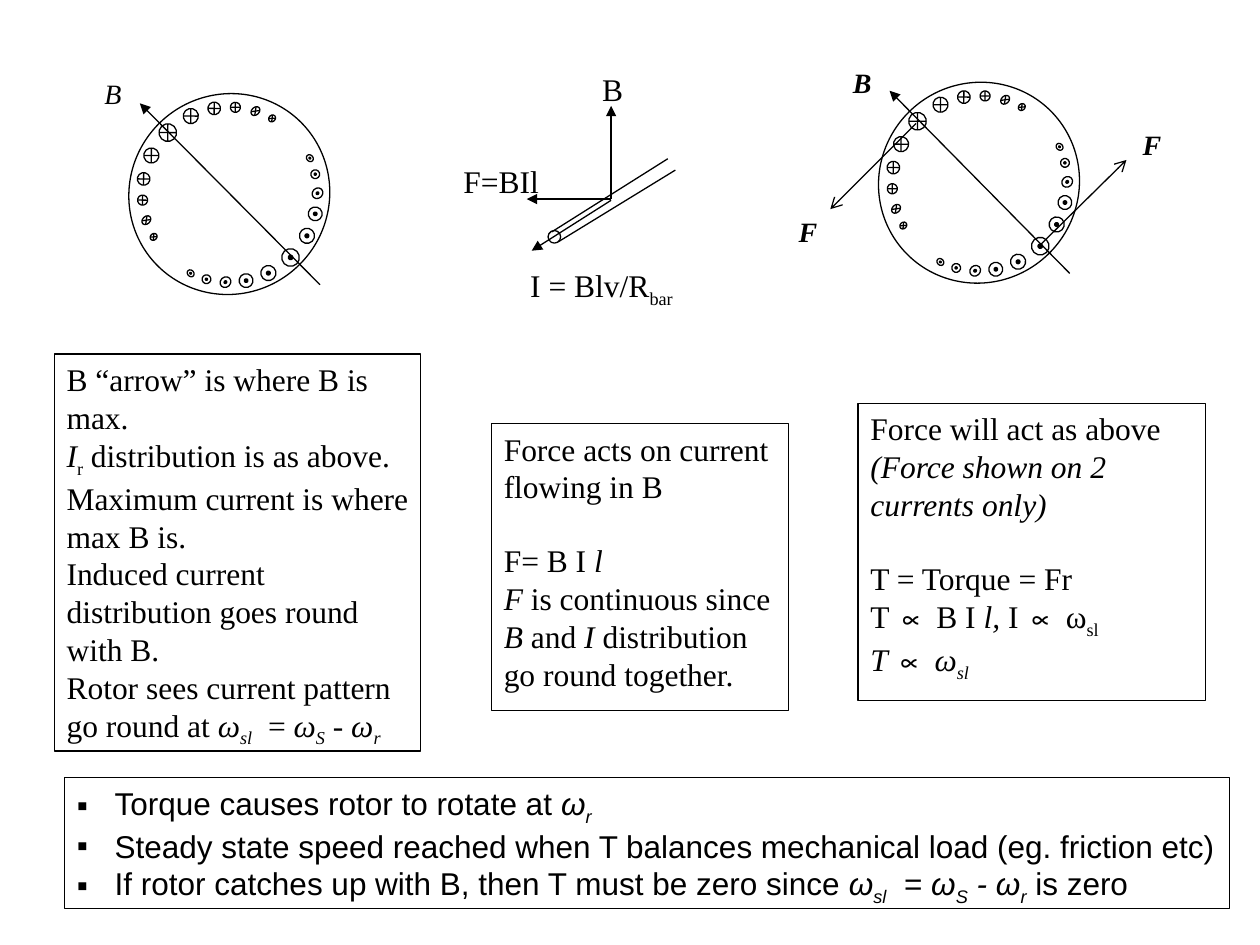
from math import cos, radians, sin

from pptx import Presentation
from pptx.dml.color import RGBColor
from pptx.enum.shapes import MSO_CONNECTOR, MSO_SHAPE
from pptx.enum.text import MSO_ANCHOR, MSO_AUTO_SIZE, PP_ALIGN
from pptx.oxml import parse_xml
from pptx.oxml.ns import nsdecls, qn
from pptx.util import Inches, Pt

COLORS = {"ink": "000000", "paper": "FFFFFF"}
SERIF, SANS = "Times New Roman", "Arial"
LINE_WIDTH = 0.75

# Text runs are (text, style): i = italic, b = bold, s = subscript.
# A paragraph starting with GAP has one empty line above it.
GAP = "gap"
SLIP = [("ω", "i"), ("sl", "is"), ("  = ", ""), ("ω", "i"), ("S", "is"), (" - ω", "i"), ("r", "is")]
NOTES = [
    ((0.43, 2.81, 2.91, 3.15), [
        [("B “arrow” is where B is max.", "")],
        [("I", "i"), ("r", "s"), (" distribution is as above.", "")],
        [("Maximum current is where max B is.", "")],
        [("Induced current distribution goes round with B.", "")],
        [("Rotor sees current pattern go round at ", ""), *SLIP],
    ]),
    ((3.9, 3.36, 2.36, 2.28), [
        [("Force acts on current flowing in B", "")],
        [GAP, ("F= B I ", ""), ("l", "i")],
        [("F", "i"), (" is continuous since", "")],
        [("B", "i"), (" and ", ""), ("I", "i"), (" distribution go round together.", "")],
    ]),
    ((6.81, 3.2, 2.76, 2.36), [
        [("Force will act as above", "")],
        [("(Force shown on 2 currents only)", "i")],
        [GAP, ("T = Torque = Fr", "")],
        [("T ", ""), ("∝ ", "i"), ("B I ", ""), ("l, ", "i"), ("I ", ""), ("∝ ", "i"),
         ("ω", ""), ("sl", "s")],
        [("T ∝ ω", "i"), ("sl", "is")],
    ]),
]
CONCLUSIONS = [
    [("Torque causes rotor to rotate at ", ""), ("ω", "i"), ("r", "is")],
    [("Steady state speed reached when T balances mechanical load (eg. friction etc)", "")],
    [("If rotor catches up with B, then T must be zero since ", ""), *SLIP, (" is zero", "")],
]
CONCLUSION_BOX = (0.51, 6.17, 9.25, 1.04)

# Rotor: conductors shrink with their angle from the B axis
ROTOR_SIZE = (1.61, 1.58)
ROTOR_TILT = 315.4
CROSSES = {"axis": 225, "radius": 0.69, "angles": (0, 18.7, 35, 49, 62.5, 74.5),
           "sizes": ((0.14, 0.14), (0.12, 0.12), (0.1, 0.1), (0.08, 0.08), (0.08, 0.06), (0.06, 0.05))}
DOTS = {"axis": 46, "radius": 0.7, "angles": (0, 17.7, 33, 46.5, 59, 70),
        "sizes": ((0.14, 0.14), (0.12, 0.12), (0.11, 0.11), (0.09, 0.08), (0.07, 0.07), (0.05, 0.06))}
DOT_SHARE = 0.25
LEFT_CENTER, RIGHT_CENTER = (1.82, 1.54), (7.77, 1.45)

# Labels: box, runs, size
LEFT_LABELS = [((0.73, 0.56, 0.51, 0.38), [("B", "i")], 16)]
RIGHT_LABELS = [
    ((6.24, 1.65, 0.51, 0.38), [("F", "bi")], 16),
    ((6.67, 0.47, 0.51, 0.38), [("B", "bi")], 16),
    ((8.97, 0.96, 0.51, 0.38), [("F", "bi")], 16),
]
BAR_LABELS = [
    ((4.68, 0.51, 0.35, 0.29), [("B", "")], 18),
    ((4.11, 2.06, 1.49, 0.36), [("I = Blv/R", ""), ("bar", "s")], 18),
    ((3.58, 1.24, 0.88, 0.3), [("F=BIl", "")], 18),
]
# Lines: start, end, arrowhead at the end
LEFT_LINES = [((2.54, 2.26), (1.11, 0.82), "triangle")]
RIGHT_LINES = [
    ((8.49, 2.17), (7.06, 0.72), "triangle"),
    ((7.27, 0.98), (6.59, 1.66), "arrow"),
    ((8.26, 1.94), (8.94, 1.27), "arrow"),
]
BAR_LINES = [
    ((4.38, 1.84), (5.3, 1.26), None),
    ((4.43, 1.92), (5.36, 1.35), None),
    ((4.85, 1.58), (4.85, 0.84), "triangle"),
    ((4.85, 1.58), (4.18, 1.58), "triangle"),
    ((4.85, 1.59), (4.22, 1.99), "triangle"),
]
BAR_NEAR_END = (4.35, 1.83, 0.1, 0.1)
BAR_FAR_END = [(5.29, 1.27), (5.32, 1.26), (5.34, 1.25), (5.36, 1.27), (5.38, 1.3), (5.38, 1.32), (5.36, 1.34)]


def color(name):
    return RGBColor.from_string(COLORS[name])


def paint(shape, fill="paper", outlined=True):
    shape.fill.solid()
    shape.fill.fore_color.rgb = color(fill)
    if outlined:
        shape.line.color.rgb = color("ink")
        shape.line.width = Pt(LINE_WIDTH)
    else:
        shape.line.fill.background()


def write(shape, paragraphs, size=18, font=SERIF, bullet=None):
    frame = shape.text_frame
    settings = {"word_wrap": True, "auto_size": MSO_AUTO_SIZE.NONE, "vertical_anchor": MSO_ANCHOR.TOP,
                "margin_left": Inches(0.1), "margin_right": Inches(0.05),
                "margin_top": Inches(0.05), "margin_bottom": Inches(0.05)}
    for name, value in settings.items():
        setattr(frame, name, value)
    for index, runs in enumerate(paragraphs):
        paragraph = frame.add_paragraph() if index else frame.paragraphs[0]
        paragraph.alignment = PP_ALIGN.LEFT
        paragraph.space_before = Pt(size * 1.15 if runs[0] == GAP else 0)
        if bullet:
            properties = paragraph._p.get_or_add_pPr()
            properties.set("marL", str(Inches(0.3)))
            properties.set("indent", str(-Inches(0.3)))
            properties.append(parse_xml(f'<a:buChar {nsdecls("a")} char="{bullet}"/>'))
        for text, style in (run for run in runs if run != GAP):
            run = paragraph.add_run()
            run.text = text
            formats = {"name": font, "size": Pt(size), "bold": "b" in style, "italic": "i" in style}
            for name, value in formats.items():
                setattr(run.font, name, value)
            run.font.color.rgb = color("ink")
            if "s" in style:
                run._r.get_or_add_rPr().set("baseline", "-25000")


def add_box(shapes, kind, box, fill="paper", outlined=True, tilt=0):
    shape = shapes.add_shape(kind, *map(Inches, box))
    shape.shadow.inherit = False
    shape.rotation = tilt
    paint(shape, fill, outlined)
    return shape


def add_labels(shapes, labels):
    for box, runs, size in labels:
        write(add_box(shapes, MSO_SHAPE.RECTANGLE, box, outlined=False), [runs], size)


def add_lines(shapes, lines):
    for start, end, head in lines:
        line = shapes.add_connector(MSO_CONNECTOR.STRAIGHT, *map(Inches, start + end))
        line.line.color.rgb = color("ink")
        line.line.width = Pt(LINE_WIDTH)
        if head:
            line.line._get_or_add_ln().append(parse_xml(f'<a:tailEnd {nsdecls("a")} type="{head}"/>'))
        line._element.find(qn("p:spPr")).append(parse_xml(f'<a:effectLst {nsdecls("a")}/>'))


def add_rotor(shapes, center, lines, labels):
    def add_centered(kind, middle, size, fill="paper"):
        corner = [m - s / 2 for m, s in zip(middle, size)]
        add_box(shapes, kind, (*corner, *size), fill, tilt=ROTOR_TILT)

    add_labels(shapes, labels)
    add_centered(MSO_SHAPE.OVAL, center, ROTOR_SIZE)
    for ring, kind in ((CROSSES, MSO_SHAPE.FLOWCHART_SUMMING_JUNCTION), (DOTS, MSO_SHAPE.OVAL)):
        for offset, size in zip(ring["angles"], ring["sizes"]):
            for side in (-1, 1) if offset else (1,):
                angle = radians(ring["axis"] + side * offset)
                middle = (center[0] + ring["radius"] * cos(angle), center[1] + ring["radius"] * sin(angle))
                add_centered(kind, middle, size)
                if ring is DOTS:
                    add_centered(MSO_SHAPE.OVAL, middle, [s * DOT_SHARE for s in size], "ink")
    add_lines(shapes, lines)


presentation = Presentation()
presentation.slide_width, presentation.slide_height = Inches(10), Inches(7.5)
slide = presentation.slides.add_slide(presentation.slide_layouts[1])
title = slide.shapes.title
title._element.getparent().remove(title._element)

# Rotors with current distribution
add_rotor(slide.shapes.add_group_shape().shapes, LEFT_CENTER, LEFT_LINES, LEFT_LABELS)
add_rotor(slide.shapes.add_group_shape().shapes, RIGHT_CENTER, RIGHT_LINES, RIGHT_LABELS)

# Conducting bar in the field
bar = slide.shapes.add_group_shape().shapes
add_labels(bar, BAR_LABELS)
add_box(bar, MSO_SHAPE.OVAL, BAR_NEAR_END)
builder = bar.build_freeform(*BAR_FAR_END[0], scale=Inches(1))
builder.add_line_segments(BAR_FAR_END[1:], close=False)
far_end = builder.convert_to_shape()
far_end.shadow.inherit = False
paint(far_end)
far_end.fill.background()
add_lines(bar, BAR_LINES)

# Explanations
for box, paragraphs in NOTES:
    write(add_box(slide.shapes, MSO_SHAPE.RECTANGLE, box), paragraphs)

# Conclusions
body = slide.placeholders[1]
body.left, body.top, body.width, body.height = map(Inches, CONCLUSION_BOX)
paint(body)
write(body, CONCLUSIONS, font=SANS, bullet="▪")

presentation.save("out.pptx")
